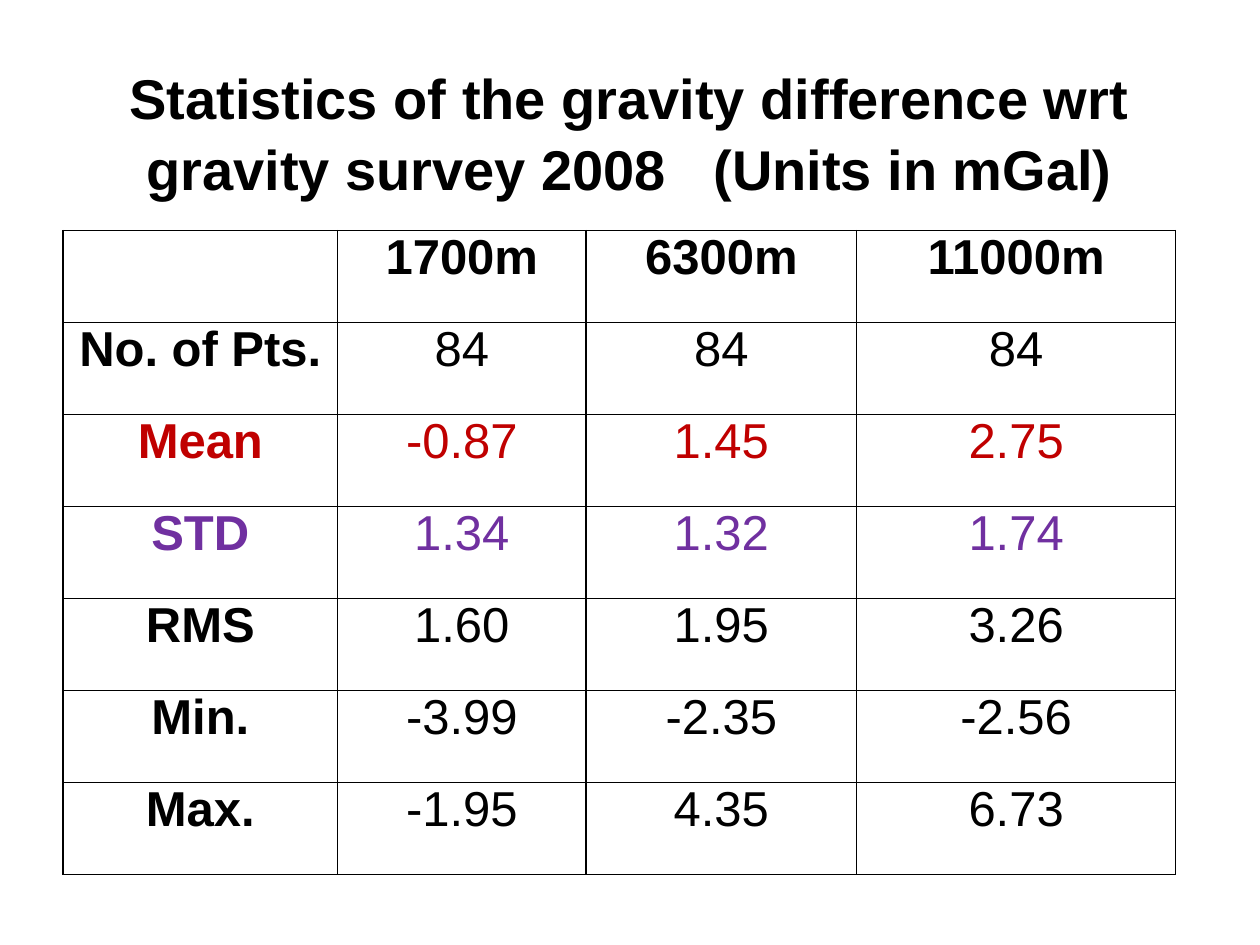
from lxml.etree import SubElement
from pptx import Presentation
from pptx.dml.color import RGBColor
from pptx.enum.text import MSO_ANCHOR, MSO_AUTO_SIZE, PP_ALIGN
from pptx.oxml.ns import qn
from pptx.util import Inches, Pt

COLORS = {"black": "000000", "mean": "C00000", "std": "7030A0"}
COL_WIDTHS = [2.18, 1.97, 2.15, 2.53]
ROW_HEIGHT = 0.73
ROWS = [
    ("black", ["", "1700m", "6300m", "11000m"]),
    ("black", ["No. of Pts.", "84", "84", "84"]),
    ("mean", ["Mean", "-0.87", "1.45", "2.75"]),
    ("std", ["STD", "1.34", "1.32", "1.74"]),
    ("black", ["RMS", "1.60", "1.95", "3.26"]),
    ("black", ["Min.", "-3.99", "-2.35", "-2.56"]),
    ("black", ["Max.", "-1.95", "4.35", "6.73"]),
]


class SlideBuilder:
    font = "Arial"
    title_size = 32
    cell_size = 28
    border_width = 1

    def __init__(self, slide):
        self.slide = slide

    def add_text(self, tf, text, size, color="black", bold=True):
        p = tf.paragraphs[0]
        p.alignment = PP_ALIGN.CENTER
        target = p
        if text:
            target = p.add_run()
            target.text = text
        values = {"name": self.font, "size": Pt(size), "bold": bold}
        for name, value in values.items():
            setattr(target.font, name, value)
        target.font.color.rgb = RGBColor.from_string(COLORS[color])
        return p

    def title(self, text, left, top, width, height):
        sp = self.slide.shapes.title
        box = {"left": left, "top": top, "width": width, "height": height}
        for name, value in box.items():
            setattr(sp, name, Inches(value))
        tf = sp.text_frame
        values = {"word_wrap": True, "vertical_anchor": MSO_ANCHOR.MIDDLE,
                  "auto_size": MSO_AUTO_SIZE.SHAPE_TO_FIT_TEXT}
        for name, value in values.items():
            setattr(tf, name, value)
        p = self.add_text(tf, text, self.title_size)
        p.line_spacing = 1.05

    def borders(self, cell):
        tcPr = cell._tc.get_or_add_tcPr()
        for side in ("lnL", "lnR", "lnT", "lnB"):
            ln = SubElement(tcPr, qn(f"a:{side}"), w=str(Pt(self.border_width)))
            fill = SubElement(ln, qn("a:solidFill"))
            SubElement(fill, qn("a:srgbClr"), val=COLORS["black"])

    def table(self, rows, left, top, col_widths, row_height):
        frame = self.slide.shapes.add_table(
            len(rows), len(col_widths), Inches(left), Inches(top),
            Inches(sum(col_widths)), Inches(row_height * len(rows)))
        table = frame.table
        table.first_row = False
        table.horz_banding = False
        for column, width in zip(table.columns, col_widths):
            column.width = Inches(width)
        margins = {"margin_left": 0.07, "margin_right": 0.07,
                   "margin_top": 0, "margin_bottom": 0}
        for i, (color, texts) in enumerate(rows):
            table.rows[i].height = Inches(row_height)
            for j, text in enumerate(texts):
                cell = table.cell(i, j)
                for name, value in margins.items():
                    setattr(cell, name, Inches(value))
                self.borders(cell)
                cell.fill.background()
                self.add_text(cell.text_frame, text, self.cell_size, color,
                              bold=i == 0 or j == 0)


def main():
    prs = Presentation()
    prs.slide_width, prs.slide_height = Inches(10), Inches(7.5)
    s = SlideBuilder(prs.slides.add_slide(prs.slide_layouts[5]))
    s.title("Statistics of the gravity difference wrt gravity survey 2008 "
            "\t(Units in mGal)", 0.58, 0.45, 8.83, 1.18)
    s.table(ROWS, 0.5, 1.83, COL_WIDTHS, ROW_HEIGHT)
    prs.save("out.pptx")


if __name__ == "__main__":
    main()
